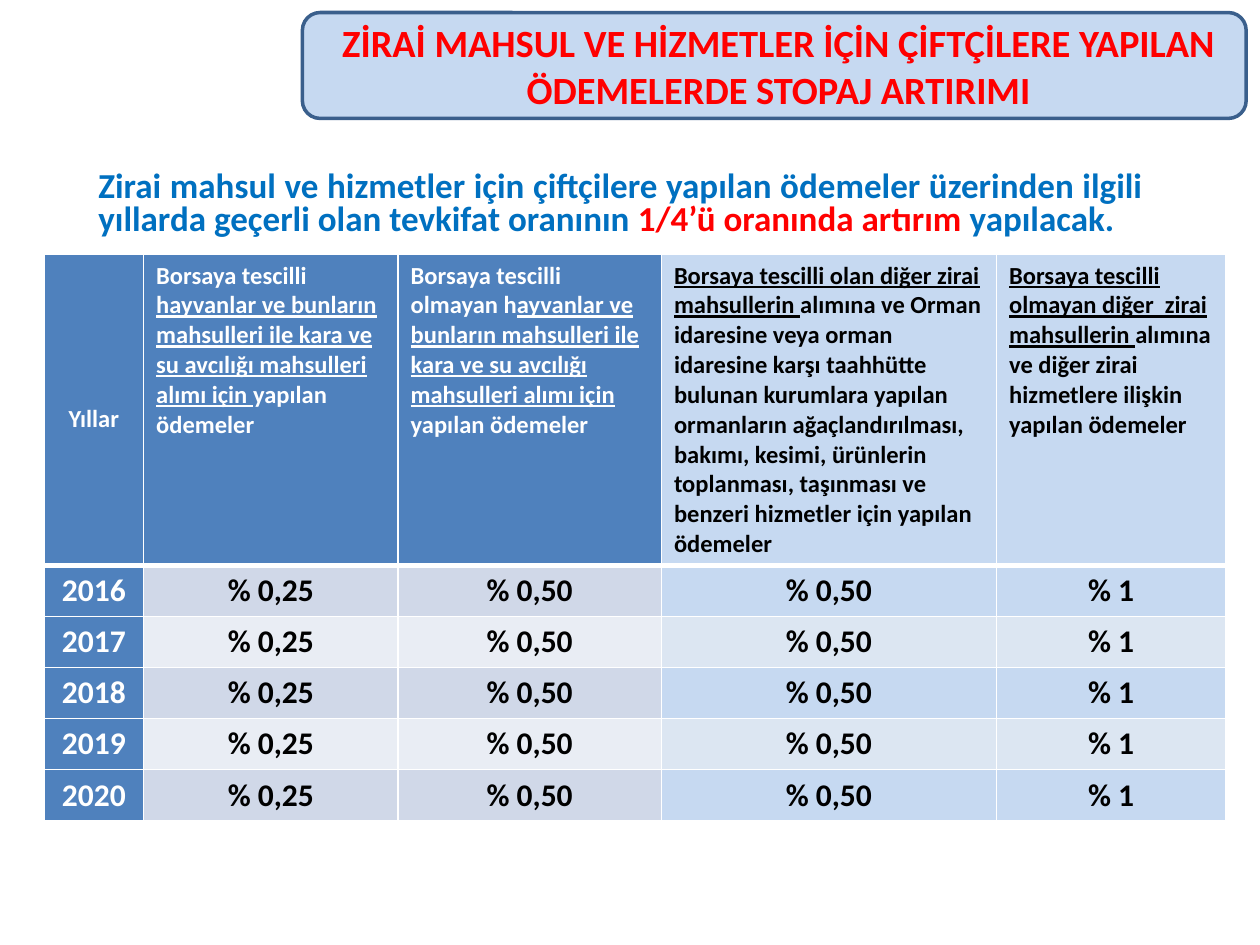
"""Build the slide on raised withholding rates for payments to farmers."""
import pptx
import pptx.dml.color
import pptx.enum.shapes
import pptx.enum.text
import pptx.oxml
import pptx.oxml.ns
import pptx.util

Inches, Pt = pptx.util.Inches, pptx.util.Pt
RGBColor = pptx.dml.color.RGBColor
ALIGN = pptx.enum.text.PP_ALIGN
MIDDLE = pptx.enum.text.MSO_ANCHOR.MIDDLE

RED = RGBColor(0xFF, 0x00, 0x00)
BLUE = RGBColor(0x00, 0x70, 0xC0)
WHITE = RGBColor(0xFF, 0xFF, 0xFF)
BLACK = RGBColor(0x00, 0x00, 0x00)
NAVY = RGBColor(0x3A, 0x5F, 0x8C)
STEEL = RGBColor(0x4F, 0x81, 0xBD)
SKY = RGBColor(0xC6, 0xD9, 0xF1)
PALE = RGBColor(0xDC, 0xE6, 0xF2)
GREY = RGBColor(0xD0, 0xD8, 0xE8)
MIST = RGBColor(0xE9, 0xED, 0xF4)


def write(para, text, size, color, line=False):
    run = para.add_run()
    run.text = text
    look = {"name": "Calibri", "size": Pt(size), "bold": True, "underline": line}
    for key, value in look.items():
        setattr(run.font, key, value)
    run.font.color.rgb = color


def edge(cell, top, bottom):
    for side, width in {"L": 1, "R": 1, "T": top, "B": bottom}.items():
        cell._tc.get_or_add_tcPr().append(pptx.oxml.parse_xml(
            f'<a:ln{side} {pptx.oxml.ns.nsdecls("a")} w="{Pt(width)}">'
            f'<a:solidFill><a:srgbClr val="{WHITE}"/></a:solidFill></a:ln{side}>'))


deck = pptx.Presentation()
deck.slide_width, deck.slide_height = Inches(10), Inches(7.5)
slide = deck.slides.add_slide(deck.slide_layouts[0])
title, lead = slide.placeholders

panel = slide.shapes.add_shape(
    pptx.enum.shapes.MSO_SHAPE.ROUNDED_RECTANGLE,
    Inches(2.4), Inches(0.1), Inches(7.49), Inches(0.84))
panel.shadow.inherit = False
panel.fill.solid()
panel.fill.fore_color.rgb = SKY
panel.line.color.rgb = NAVY
panel.line.width = Pt(2)
title.element.addprevious(panel.element)

spots = [(title, (2.48, 0.05, 7.4, 0.94)), (lead, (0.59, 1.31, 8.58, 0.71))]
for shape, spot in spots:
    for key, value in zip(("left", "top", "width", "height"), spot):
        setattr(shape, key, Inches(value))

title.text_frame.vertical_anchor = MIDDLE
para = title.text_frame.paragraphs[0]
para.alignment = ALIGN.CENTER
write(para, "ZİRAİ MAHSUL VE HİZMETLER İÇİN ÇİFTÇİLERE YAPILAN", 22, RED)
para.add_line_break()
write(para, "ÖDEMELERDE STOPAJ ARTIRIMI", 22, RED)

lead.text_frame.margin_left = Inches(0.19)
para = lead.text_frame.paragraphs[0]
form = {"alignment": ALIGN.JUSTIFY, "line_spacing": 0.8, "space_before": Pt(0)}
for key, value in form.items():
    setattr(para, key, value)
for text, color in [
    ("Zirai mahsul ve hizmetler için çiftçilere yapılan ödemeler üzerinden "
     "ilgili yıllarda geçerli olan tevkifat oranının ", BLUE),
    ("1/4’ü oranında artırım ", RED),
    ("yapılacak.", BLUE),
]:
    write(para, text, 20, color)

heads = [
    [("Yıllar", False)],
    [("Borsaya tescilli ", False),
     ("hayvanlar ve bunların mahsulleri ile kara ve su avcılığı mahsulleri "
      "alımı için ", True),
     ("yapılan ödemeler", False)],
    [("Borsaya tescilli olmayan h", False),
     ("ayvanlar ve bunların mahsulleri ile kara ve su avcılığı mahsulleri "
      "alımı için ", True),
     ("yapılan ödemeler", False)],
    [("Borsaya tescilli olan diğer zirai mahsullerin ", True),
     ("alımına ve Orman idaresine veya orman idaresine karşı taahhütte bulunan "
      "kurumlara yapılan ormanların ağaçlandırılması, bakımı, kesimi, ürünlerin "
      "toplanması, taşınması ve benzeri hizmetler için yapılan ödemeler", False)],
    [("Borsaya tescilli olmayan diğer  zirai mahsullerin ", True),
     ("alımına ve diğer zirai hizmetlere ilişkin yapılan ödemeler", False)],
]
rates = ["% 0,25", "% 0,50", "% 0,50", "% 1"]
years = range(2016, 2021)
widths = [0.79, 2.02, 2.09, 2.66, 1.82]

table = slide.shapes.add_table(
    len(years) + 1, len(widths),
    Inches(0.35), Inches(2.02), Inches(sum(widths)), Inches(4.45)).table
table.first_row = table.horz_banding = False
for col, width in zip(table.columns, widths):
    col.width = Inches(width)
for row in table.rows:
    row.height = Inches(0.4)
table.rows[0].height = Inches(2.45)

for c, runs in enumerate(heads):
    cell = table.cell(0, c)
    edge(cell, 1, 3)
    cell.fill.solid()
    cell.fill.fore_color.rgb = STEEL if c < 3 else SKY
    for text, line in runs:
        write(cell.text_frame.paragraphs[0], text, 14, WHITE if c < 3 else BLACK, line)

corner = table.cell(0, 0)
corner.vertical_anchor = MIDDLE
corner.margin_top = Inches(0.19)
corner.text_frame.paragraphs[0].alignment = ALIGN.CENTER

for r, year in enumerate(years, 1):
    left, right = (GREY, SKY) if r % 2 else (MIST, PALE)
    fills = [STEEL, left, left, right, right]
    for c, text in enumerate([str(year), *rates]):
        cell = table.cell(r, c)
        edge(cell, 3 if r == 1 else 1, 1)
        cell.fill.solid()
        cell.fill.fore_color.rgb = fills[c]
        cell.vertical_anchor = MIDDLE
        para = cell.text_frame.paragraphs[0]
        para.alignment = ALIGN.CENTER
        write(para, text, 18, BLACK if c else WHITE)

deck.save("out.pptx")
